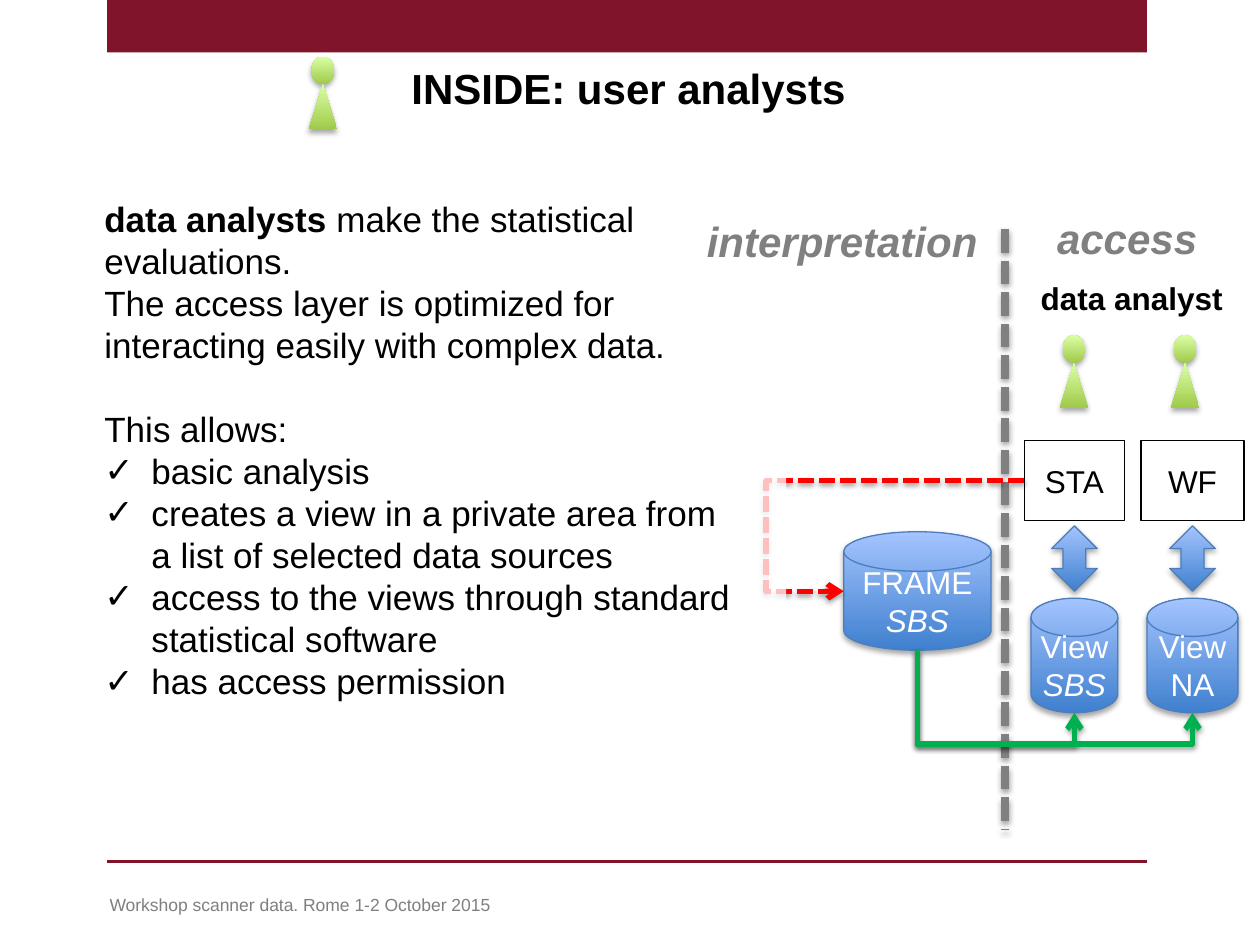
from dataclasses import dataclass

from lxml import etree
from pptx import Presentation
from pptx.dml.color import RGBColor
from pptx.enum.dml import MSO_LINE
from pptx.enum.shapes import MSO_CONNECTOR, MSO_SHAPE
from pptx.enum.text import MSO_ANCHOR, MSO_AUTO_SIZE, PP_ALIGN
from pptx.oxml.ns import qn
from pptx.util import Cm, Pt

RECTANGLE, OVAL = MSO_SHAPE.RECTANGLE, MSO_SHAPE.OVAL
TRIANGLE, UP_DOWN = MSO_SHAPE.ISOSCELES_TRIANGLE, MSO_SHAPE.UP_DOWN_ARROW
DISK = MSO_SHAPE.FLOWCHART_MAGNETIC_DISK
STRAIGHT, ELBOW = MSO_CONNECTOR.STRAIGHT, MSO_CONNECTOR.ELBOW
DASHED = MSO_LINE.SQUARE_DOT
CENTER, LEFT = PP_ALIGN.CENTER, PP_ALIGN.LEFT
TOP, MIDDLE = MSO_ANCHOR.TOP, MSO_ANCHOR.MIDDLE


@dataclass(frozen=True)
class Theme:
    font: str = "Arial"
    maroon: str = "7F142A"
    black: str = "000000"
    white: str = "FFFFFF"
    gray: str = "808080"
    footer_gray: str = "7F7F7F"
    green: str = "00B050"
    red: str = "FF0000"
    disk_line: str = "4B7EBC"
    blues: tuple = ("3F80CE", "A4C4FF")
    limes: tuple = ("A0CA4A", "DAFFA5")
    heading: int = 24
    body: int = 20
    label: int = 18
    footer: int = 10


THEME = Theme()


def add_shadow(shape, alpha, distance):
    properties = shape.element.find(qn("p:spPr"))
    effects = properties.find(qn("a:effectLst"))
    if effects is None:
        effects = etree.SubElement(properties, qn("a:effectLst"))
    shadow = etree.SubElement(effects, qn("a:outerShdw"), blurRad="40000", dist=str(distance),
                              dir="5400000", rotWithShape="0")
    color = etree.SubElement(shadow, qn("a:srgbClr"), val=THEME.black)
    etree.SubElement(color, qn("a:alpha"), val=str(alpha * 1000))


def add_box(shapes, kind, left, top, width, height, fill, line=None):
    """A preset shape; a pair of fill colours gives a shaded shape with a shadow."""
    shape = shapes.add_shape(kind, Cm(left), Cm(top), Cm(width), Cm(height))
    shape.shadow.inherit = False
    if line:
        shape.line.color.rgb = RGBColor.from_string(line)
        shape.line.width = Pt(0.75)
    else:
        shape.line.fill.background()
    if isinstance(fill, tuple):
        shape.fill.gradient()
        shape.fill.gradient_angle = 90
        for stop, color in zip(shape.fill.gradient_stops, fill):
            stop.color.rgb = RGBColor.from_string(color)
        add_shadow(shape, 35, 23000)
    else:
        shape.fill.solid()
        shape.fill.fore_color.rgb = RGBColor.from_string(fill)
    return shape


def style_line(connector, color, width, dashed=False, arrow=False, shadow=True):
    connector.line.color.rgb = RGBColor.from_string(color)
    connector.line.width = Pt(width)
    if dashed:
        connector.line.dash_style = DASHED
    properties = connector.element.find(qn("p:spPr"))
    if arrow:
        etree.SubElement(properties.find(qn("a:ln")), qn("a:tailEnd"), type="arrow")
    etree.SubElement(properties, qn("a:effectLst"))
    if shadow:
        add_shadow(connector, 38, 20000)


def add_line(shapes, x1, y1, x2, y2):
    return shapes.add_connector(STRAIGHT, Cm(x1), Cm(y1), Cm(x2), Cm(y2))


def add_elbow(shapes, start, end, bend, vertical=False):
    """An elbow whose middle leg lies at bend times the span, leaving sideways or downwards."""
    (x1, y1), (x2, y2) = start, end
    if vertical:
        middle_x, middle_y = (x1 + x2) / 2, (y1 + y2) / 2
        half_width, half_height = (y2 - y1) / 2, (x2 - x1) / 2
        x1, x2 = middle_x - half_width, middle_x + half_width
        y1, y2 = middle_y - half_height, middle_y + half_height
    connector = shapes.add_connector(ELBOW, Cm(x1), Cm(y1), Cm(x2), Cm(y2))
    properties = connector.element.find(qn("p:spPr"))
    if vertical:
        transform = properties.find(qn("a:xfrm"))
        transform.set("rot", "16200000")
        transform.set("flipH", "1")
    guides = properties.find(qn("a:prstGeom")).find(qn("a:avLst"))
    etree.SubElement(guides, qn("a:gd"), name="adj1", fmla=f"val {round(bend * 100000)}")
    return connector


def set_font(font, size, color, bold=False, italic=False):
    font.name, font.size = THEME.font, Pt(size)
    font.bold, font.italic = bold, italic
    font.color.rgb = RGBColor.from_string(color)


def write(shape, lines, size, color, align=CENTER, anchor=MIDDLE, bold=False, italics=(False,)):
    frame = shape.text_frame
    frame.text = "\n".join(lines)
    frame.vertical_anchor = anchor
    for paragraph, italic in zip(frame.paragraphs, italics):
        paragraph.alignment = align
        set_font(paragraph.font, size, color, bold, italic)


def add_label(shapes, left, top, width, height, text, size, color, wrap=False, **style):
    label = shapes.add_textbox(Cm(left), Cm(top), Cm(width), Cm(height))
    write(label, [text], size, color, LEFT, TOP, **style)
    label.text_frame.word_wrap = wrap


def place(shape, left, top, width, height):
    shape.left, shape.top, shape.width, shape.height = Cm(left), Cm(top), Cm(width), Cm(height)
    shape.text_frame.auto_size = MSO_AUTO_SIZE.NONE


def add_person(shapes, left, top):
    group = shapes.add_group_shape()
    add_box(group.shapes, OVAL, left + 0.06, top, 0.46, 0.56, THEME.limes)
    add_box(group.shapes, TRIANGLE, left, top + 0.56, 0.58, 0.91, THEME.limes)


def add_disk(shapes, left, top, width, height, lines, italics, tight=False):
    disk = add_box(shapes, DISK, left, top, width, height, THEME.blues, THEME.disk_line)
    if tight:
        disk.text_frame.margin_left = disk.text_frame.margin_right = 0
    write(disk, lines, THEME.label, THEME.white, italics=italics)


def add_page_frame(shapes, left, width):
    add_box(shapes, RECTANGLE, left, 0, width, 1.06, THEME.maroon)
    rule = add_line(shapes, left, 17.37, left + width, 17.37)
    style_line(rule, THEME.maroon, 2, shadow=False)
    add_label(shapes, left - 0.2, 17.9, 16.99, 0.69, "Workshop scanner data. Rome 1-2 October 2015",
              THEME.footer, THEME.footer_gray, wrap=True)


def add_title(slide, left, top, width, height):
    title = slide.shapes.title
    place(title, left, top, width, height)
    write(title, ["INSIDE: user analysts"], THEME.heading, THEME.black, anchor=TOP, bold=True)
    add_person(slide.shapes, left + 4.98, top)


def fill_body(body, left, top, width, height):
    place(body, left, top, width, height)
    intro = [[("data analysts ", True), ("make the statistical evaluations.", False)],
             [("The access layer is optimized for interacting easily with complex data.", False)],
             [("This allows:", False)]]
    checks = ["basic analysis",
              "creates a view in a private area from a list of selected data sources",
              "access to the views through standard statistical software",
              "has access permission"]
    frame = body.text_frame
    for index, runs in enumerate(intro + [[(text, False)] for text in checks]):
        paragraph = frame.add_paragraph() if index else frame.paragraphs[0]
        checked = index >= len(intro)
        properties = paragraph._p.get_or_add_pPr()
        properties.set("marL", str(Cm(2.22 if checked else 1.27)))
        properties.set("indent", str(Cm(-0.95 if checked else 0)))
        if checked:
            etree.SubElement(properties, qn("a:buChar"), char="✓")
        else:
            etree.SubElement(properties, qn("a:buNone"))
        # One line of space sets the list apart from the introduction
        paragraph.space_before = Pt(24 if index == len(intro) - 1 else 0)
        set_font(paragraph.font, THEME.body, THEME.black)
        for text, bold in runs:
            run = paragraph.add_run()
            run.text = text
            if bold:
                run.font.bold = True
    # The list lies above the diagram
    body.element.getparent().append(body.element)


def add_diagram(shapes, left, top):
    columns = [(left + 7.66, 2.01, "STA", 1.75, "SBS"), (left + 10.04, 2.08, "WF", 1.83, "NA")]
    frame_bottom = (left + 4.5, top + 8.94)

    # Data frame and the border between the layers
    add_disk(shapes, left + 3.01, top + 6.55, 2.97, 2.39, ["FRAME", "SBS"], (False, True))
    divider = add_line(shapes, left + 6.26, top + 0.45, left + 6.26, top + 12.57)
    style_line(divider, THEME.gray, 4.5, dashed=True)

    # Tools, views and the flow from the frame
    for center, tool_width, tool, view_width, view in columns:
        add_disk(shapes, center - view_width / 2, top + 7.89, view_width, 2.31,
                 ["View", view], (False, view == "SBS"), tight=True)
        flow = add_elbow(shapes, frame_bottom, (center, top + 10.2), 1.5, vertical=True)
        style_line(flow, THEME.green, 3, arrow=True)
        add_box(shapes, UP_DOWN, center - 0.46, top + 6.43, 0.92, 1.32, THEME.blues, THEME.disk_line)
        box = add_box(shapes, RECTANGLE, center - tool_width / 2, top + 4.71, tool_width, 1.62,
                      THEME.white, THEME.black)
        write(box, [tool], THEME.label, THEME.black)

    # Request from the tool back to the frame, partly veiled
    request = add_elbow(shapes, (left + 6.65, top + 5.52), (left + 3.01, top + 7.75), 1.43)
    style_line(request, THEME.red, 3, dashed=True, arrow=True)
    veil = add_box(shapes, RECTANGLE, left + 0.58, top + 4.72, 1.27, 3.81, THEME.white)
    color = veil.element.spPr.find(qn("a:solidFill")).find(qn("a:srgbClr"))
    etree.SubElement(color, qn("a:alpha"), val="75000")

    # Layer names and analysts
    layer_style = dict(size=THEME.heading, color=THEME.gray, bold=True, italics=(True,))
    add_label(shapes, left + 7.06, top - 0.01, 3.38, 1.27, "access", **layer_style)
    add_label(shapes, left, top + 0.05, 6.02, 1.27, "interpretation", **layer_style)
    add_label(shapes, left + 6.73, top + 1.34, 4.22, 1.02, "data analyst",
              THEME.label, THEME.black, bold=True)
    for offset in (7.36, 9.6):
        add_person(shapes, left + offset, top + 2.59)


def main():
    presentation = Presentation()
    presentation.slide_width, presentation.slide_height = Cm(25.4), Cm(19.05)
    slide = presentation.slides.add_slide(presentation.slide_layouts[1])
    add_page_frame(slide.shapes, 2.16, 20.96)
    add_diagram(slide.shapes, 14, 4.17)
    add_title(slide, 1.24, 1.14, 22.86, 1.42)
    fill_body(slide.placeholders[1], 0.58, 3.86, 14.63, 10.52)
    presentation.save("out.pptx")


if __name__ == "__main__":
    main()
